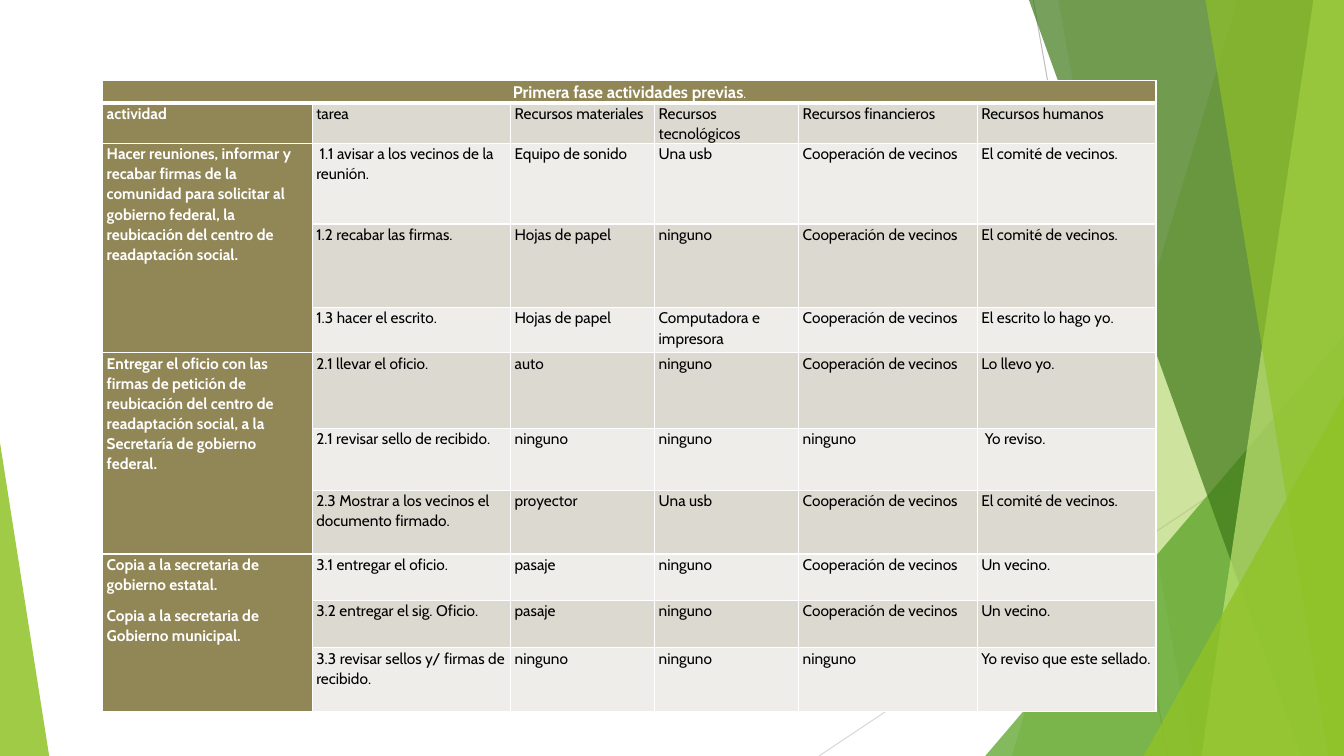
from lxml import etree
from pptx import Presentation
from pptx.dml.color import RGBColor
from pptx.enum.shapes import MSO_CONNECTOR, MSO_SHAPE
from pptx.enum.text import PP_ALIGN
from pptx.oxml.ns import qn
from pptx.util import Cm, Pt

STRAIGHT = MSO_CONNECTOR.STRAIGHT
TRIANGLE = MSO_SHAPE.ISOSCELES_TRIANGLE
CENTER, LEFT = PP_ALIGN.CENTER, PP_ALIGN.LEFT

FONT = "Cabin"
COLORS = {
    "khaki": "918655", "sand": "DCD9D1", "pale": "EEEDE9",
    "white": "FFFFFF", "black": "000000",
    "gray": "BFBFBF", "light gray": "D9D9D9",
    "lime": "90C226", "green": "54A021", "forest": "3F7819", "mint": "C0E474",
}
SLIDE_WIDTH, SLIDE_HEIGHT = 33.87, 19.05

# Lengths in cm, measured leftwards from the right edge of the slide
RAYS = [(7.83, 0, 4.45, 19.05, "gray"), (0, 10.24, 13.23, 19.05, "light gray")]
# kind, top offset or width, bottom offset or height, color, opacity in percent
FACETS = [
    ("band", 2.68, 8.37, "lime", 30),
    ("band", 7.2, 3.82, "lime", 20),
    ("triangle", 9.04, 10.59, "green", 72),
    ("band", 7.94, 1.08, "forest", 70),
    ("band", 0.77, 3.59, "mint", 70),
    ("band", 3.49, 0.39, "lime", 65),
    ("triangle", 5.05, 9.07, "lime", 80),
]

TABLE_TITLE = "Primera fase actividades previas"
HEADINGS = ["actividad", "tarea", "Recursos materiales", "Recursos tecnológicos",
            "Recursos financieros", "Recursos humanos"]
FUNDING = "Cooperación de vecinos"
COMMITTEE = "El comité de vecinos."
PHASES = [
    (["Hacer reuniones, informar y recabar firmas de la comunidad para solicitar al "
      "gobierno federal, la reubicación del centro de readaptación social."],
     [[" 1.1 avisar a los vecinos de la reunión.", "Equipo de sonido", "Una usb",
       FUNDING, COMMITTEE],
      ["1.2 recabar las firmas.", "Hojas de papel", "ninguno", FUNDING, COMMITTEE],
      ["1.3 hacer el escrito.", "Hojas de papel", "Computadora e impresora",
       FUNDING, "El escrito lo hago yo."]]),
    (["Entregar el oficio con las firmas de petición de reubicación del centro de "
      "readaptación social, a la Secretaría de gobierno federal."],
     [["2.1 llevar el oficio.", "auto", "ninguno", FUNDING, "Lo llevo yo."],
      ["2.1 revisar sello de recibido.", "ninguno", "ninguno", "ninguno", " Yo reviso."],
      ["2.3 Mostrar a los vecinos el documento firmado.", "proyector", "Una usb",
       FUNDING, COMMITTEE]]),
    (["Copia a la secretaria de gobierno estatal.",
      "Copia a la secretaria de Gobierno municipal."],
     [["3.1 entregar el oficio.", "pasaje", "ninguno", FUNDING, "Un vecino."],
      ["3.2 entregar el sig. Oficio.", "pasaje", "ninguno", FUNDING, "Un vecino."],
      ["3.3 revisar sellos y/ firmas de recibido.", "ninguno", "ninguno", "ninguno",
       "Yo reviso que este sellado."]]),
]
COLUMN_WIDTHS = [5.28, 5, 3.63, 3.63, 4.5, 4.5]
ROW_HEIGHTS = [0.57, 1, 2.03, 2.11, 1.14, 1.9, 1.57, 1.6, 1.17, 1.19, 1.6]


def color(name):
    return RGBColor.from_string(COLORS[name])


def paint_facet(shape, fill, opacity):
    shape.shadow.inherit = False
    shape.line.fill.background()
    shape.fill.solid()
    shape.fill.fore_color.rgb = color(fill)
    srgb = shape.fill._xPr.find(qn("a:solidFill")).find(qn("a:srgbClr"))
    etree.SubElement(srgb, qn("a:alpha"), val=str(opacity * 1000))


def add_triangle(page, left, top, width, height, apex):
    """Right triangle whose apex lies at the left (0) or right (1) of its box."""
    shape = page.shapes.add_shape(TRIANGLE, Cm(left), Cm(top), Cm(width), Cm(height))
    shape.adjustments[0] = apex
    return shape


def add_right_facets(page, right, top, bottom):
    for start_x, start_y, end_x, end_y, stroke in RAYS:
        ray = page.shapes.add_connector(
            STRAIGHT, Cm(right - start_x), Cm(top + start_y),
            Cm(right - end_x), Cm(top + end_y))
        ray.line.color.rgb = color(stroke)
        ray.line.width = Pt(0.75)
        etree.SubElement(ray._element.spPr, qn("a:effectLst"))
    for kind, first, second, fill, opacity in FACETS:
        if kind == "triangle":
            shape = add_triangle(page, right - first, bottom - second, first, second, 1)
        else:
            outline = page.shapes.build_freeform(Cm(right - first), Cm(top))
            corners = [(right, top), (right, bottom), (right - second, bottom)]
            outline.add_line_segments([(Cm(x), Cm(y)) for x, y in corners], close=True)
            shape = outline.convert_to_shape()
        paint_facet(shape, fill, opacity)


def add_left_facet(page, left, bottom, width, height):
    facet = add_triangle(page, left, bottom - height, width, height, 0)
    paint_facet(facet, "lime", 85)


def add_borders(cell, top_points, bottom_points):
    properties = cell._tc.get_or_add_tcPr()
    for side, points in zip("LRTB", (1, 1, top_points, bottom_points)):
        line = etree.SubElement(properties, qn("a:ln" + side), w=str(Pt(points)))
        solid = etree.SubElement(line, qn("a:solidFill"))
        etree.SubElement(solid, qn("a:srgbClr"), val=COLORS["white"])


def style_cell(cell, row, column):
    is_heading = row == 0 or column == 0
    add_borders(cell, 3 if row == 1 else 1, 3 if row == 0 else 1)
    cell.fill.solid()
    cell.fill.fore_color.rgb = color("khaki" if is_heading else ("pale", "sand")[row % 2])
    cell.margin_left = cell.margin_right = Cm(0.1)
    cell.margin_top = cell.margin_bottom = 0
    paras = cell.text_frame.paragraphs
    for para in paras:
        para.alignment = CENTER if row == 0 else LEFT
        para.line_spacing = 1.07
        para.space_after = Pt(0 if para is paras[-1] else 8)
        para.font.name = FONT
        para.font.size = Pt(12 if row == 0 else 11)
        para.font.bold = is_heading
        para.font.color.rgb = color("white" if is_heading else "black")


def add_activity_table(page, left, top):
    frame = page.shapes.add_table(
        len(ROW_HEIGHTS), len(COLUMN_WIDTHS), Cm(left), Cm(top),
        Cm(sum(COLUMN_WIDTHS)), Cm(sum(ROW_HEIGHTS)))
    table = frame.table
    table.first_row = table.horz_banding = False
    for column, width in zip(table.columns, COLUMN_WIDTHS):
        column.width = Cm(width)
    for row, height in zip(table.rows, ROW_HEIGHTS):
        row.height = Cm(height)

    table.cell(0, 0).merge(table.cell(0, len(COLUMN_WIDTHS) - 1))
    title = table.cell(0, 0).text_frame.paragraphs[0]
    title.add_run().text = TABLE_TITLE
    period = title.add_run()
    period.text = "."
    period.font.size = Pt(7)

    for column, heading in enumerate(HEADINGS):
        table.cell(1, column).text = heading
    row = 2
    for activity, tasks in PHASES:
        table.cell(row, 0).merge(table.cell(row + len(tasks) - 1, 0))
        table.cell(row, 0).text = "\n".join(activity)
        for task in tasks:
            for column, words in enumerate(task, start=1):
                table.cell(row, column).text = words
            row += 1

    for row in range(len(ROW_HEIGHTS)):
        for column in range(len(COLUMN_WIDTHS)):
            style_cell(table.cell(row, column), row, column)


def main():
    deck = Presentation()
    deck.slide_width, deck.slide_height = Cm(SLIDE_WIDTH), Cm(SLIDE_HEIGHT)
    page = deck.slides.add_slide(deck.slide_layouts[6])
    add_right_facets(page, SLIDE_WIDTH, 0, SLIDE_HEIGHT)
    add_left_facet(page, 0, SLIDE_HEIGHT, 1.24, 7.9)
    add_activity_table(page, 2.59, 2.03)
    deck.save("out.pptx")


if __name__ == "__main__":
    main()
